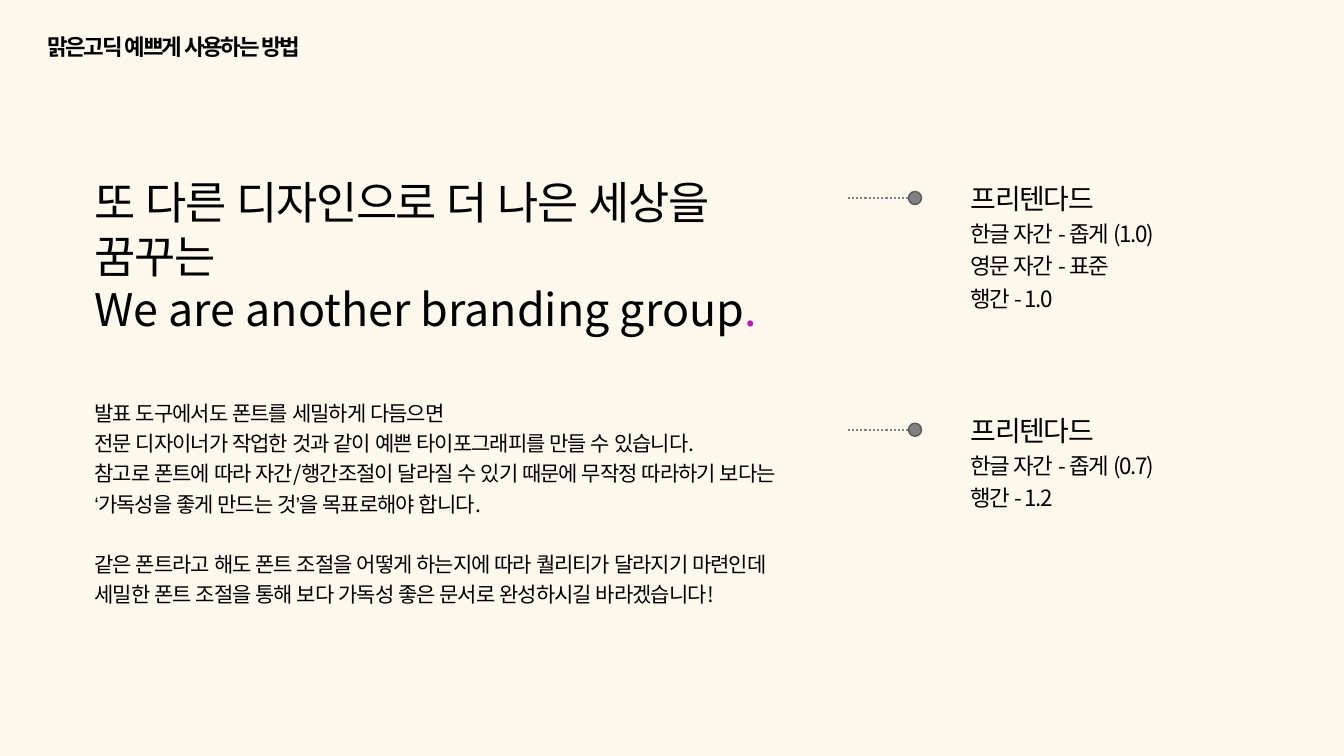
from lxml import etree
from pptx import Presentation
from pptx.dml.color import RGBColor
from pptx.enum import dml, shapes, text
from pptx.oxml import ns
from pptx.util import Cm, Pt

COLORS = {
    "paper": "FFF9ED",
    "ink": "000000",
    "accent": "C314BA",
    "marker": "808080",
    "marker_edge": "595959",
}
SANS = "Noto Sans CJK KR"
EAST_ASIAN = "Arial"
FRAME_FORMAT = {
    "word_wrap": True,
    "auto_size": text.MSO_AUTO_SIZE.NONE,
    "vertical_anchor": text.MSO_ANCHOR.TOP,
    "margin_left": Cm(0.25),
    "margin_right": Cm(0.25),
    "margin_top": Cm(0.13),
    "margin_bottom": Cm(0.13),
}
HEADING = "맑은고딕 예쁘게 사용하는 방법"
HEADLINE_KOREAN = "또 다른 디자인으로 더 나은 세상을 꿈꾸는"
HEADLINE_ENGLISH = "We are another branding group"
STORY = [
    [
        "발표 도구에서도 폰트를 세밀하게 다듬으면",
        "전문 디자이너가 작업한 것과 같이 예쁜 타이포그래피를 만들 수 있습니다.",
        "참고로 폰트에 따라 자간/행간조절이 달라질 수 있기 때문에 무작정 따라하기 보다는",
        "‘가독성을 좋게 만드는 것’을 목표로해야 합니다.",
    ],
    [
        "같은 폰트라고 해도 폰트 조절을 어떻게 하는지에 따라 퀄리티가 달라지기 마련인데",
        "세밀한 폰트 조절을 통해 보다 가독성 좋은 문서로 완성하시길 바라겠습니다!",
    ],
]
NOTES = [
    ((24.21, 4.27, 8.36, 3.84),
     ["한글 자간 - 좁게 (1.0)", "영문 자간 - 표준", "행간 - 1.0"]),
    ((24.21, 10.11, 8.36, 2.92),
     ["한글 자간 - 좁게 (0.7)", "행간 - 1.2"]),
]


def rgb(name):
    return RGBColor.from_string(COLORS[name])


def apply_format(target, values):
    for attribute, value in values.items():
        setattr(target, attribute, value)


def place(region, box):
    apply_format(region, dict(zip(("left", "top", "width", "height"), map(Cm, box))))
    apply_format(region.text_frame, FRAME_FORMAT)
    return region.text_frame


def add_run(paragraph, words, size, tracking=0, color="ink", font=SANS, bold=False):
    run = paragraph.add_run()
    run.text = words
    apply_format(run.font, {"size": Pt(size), "name": font, "bold": bold})
    run.font.color.rgb = rgb(color)
    properties = run.font._element
    properties.set("spc", str(round(tracking * 100)))
    etree.SubElement(properties, ns.qn("a:ea"), typeface=EAST_ASIAN)


def add_line(frame, spacing=1.0, before=0):
    first = frame.paragraphs[0]
    paragraph = frame.add_paragraph() if first.runs else first
    apply_format(paragraph, {
        "alignment": text.PP_ALIGN.LEFT,
        "line_spacing": spacing,
        "space_before": Pt(before),
        "space_after": Pt(0),
    })
    properties = paragraph._p.get_or_add_pPr()
    properties.set("marL", "0")
    properties.set("indent", "0")
    etree.SubElement(properties, ns.qn("a:buNone"))
    return paragraph


def add_heading(slide, box):
    frame = place(slide.shapes.title, box)
    add_run(add_line(frame), HEADING, 16, -1.5, font="Arial", bold=True)


def add_headline(slide, box):
    frame = place(slide.shapes.add_textbox(0, 0, 0, 0), box)
    add_run(add_line(frame), HEADLINE_KOREAN, 32, -1)
    english = add_line(frame)
    add_run(english, HEADLINE_ENGLISH, 32)
    add_run(english, ".", 32, color="accent")


def add_story(slide, box):
    frame = place(slide.placeholders[1], box)
    for part, sentences in enumerate(STORY):
        for position, sentence in enumerate(sentences):
            gap = 21.6 if part and position == 0 else 0
            add_run(add_line(frame, 1.2, gap), sentence, 15, -0.7)


def add_marker(slide, box):
    left, top = box[:2]
    start, end, middle, diameter = left - 2.85, left - 1.15, top + 0.72, 0.33
    marker = slide.shapes.add_group_shape()
    leader = marker.shapes.add_connector(
        shapes.MSO_CONNECTOR.STRAIGHT, Cm(start), Cm(middle), Cm(end), Cm(middle))
    leader.line.color.rgb = rgb("marker")
    apply_format(leader.line, {"width": Pt(1.5), "dash_style": dml.MSO_LINE.ROUND_DOT})
    etree.SubElement(leader._element.spPr, ns.qn("a:effectLst"))
    dot = marker.shapes.add_shape(
        shapes.MSO_SHAPE.OVAL, Cm(end - diameter / 2), Cm(middle - diameter / 2),
        Cm(diameter), Cm(diameter))
    dot.shadow.inherit = False
    dot.fill.solid()
    dot.fill.fore_color.rgb = rgb("marker")
    dot.line.color.rgb = rgb("marker_edge")
    dot.line.width = Pt(1)


def add_note(slide, box, settings):
    frame = place(slide.shapes.add_textbox(0, 0, 0, 0), box)
    add_run(add_line(frame, 1.2), "프리텐다드", 20, -1)
    for setting in settings:
        add_run(add_line(frame, 1.2), setting, 16, -1)
    add_marker(slide, box)


def main():
    deck = Presentation()
    apply_format(deck, {"slide_width": Cm(33.87), "slide_height": Cm(19.05)})
    slide = deck.slides.add_slide(deck.slide_layouts[1])
    slide.background.fill.solid()
    slide.background.fill.fore_color.rgb = rgb("paper")
    add_heading(slide, (0.94, 0.71, 8.89, 0.94))
    add_headline(slide, (2.13, 4.27, 19.23, 3.0))
    add_story(slide, (2.13, 9.83, 18.31, 5.59))
    for box, settings in NOTES:
        add_note(slide, box, settings)
    deck.save("out.pptx")


if __name__ == "__main__":
    main()
